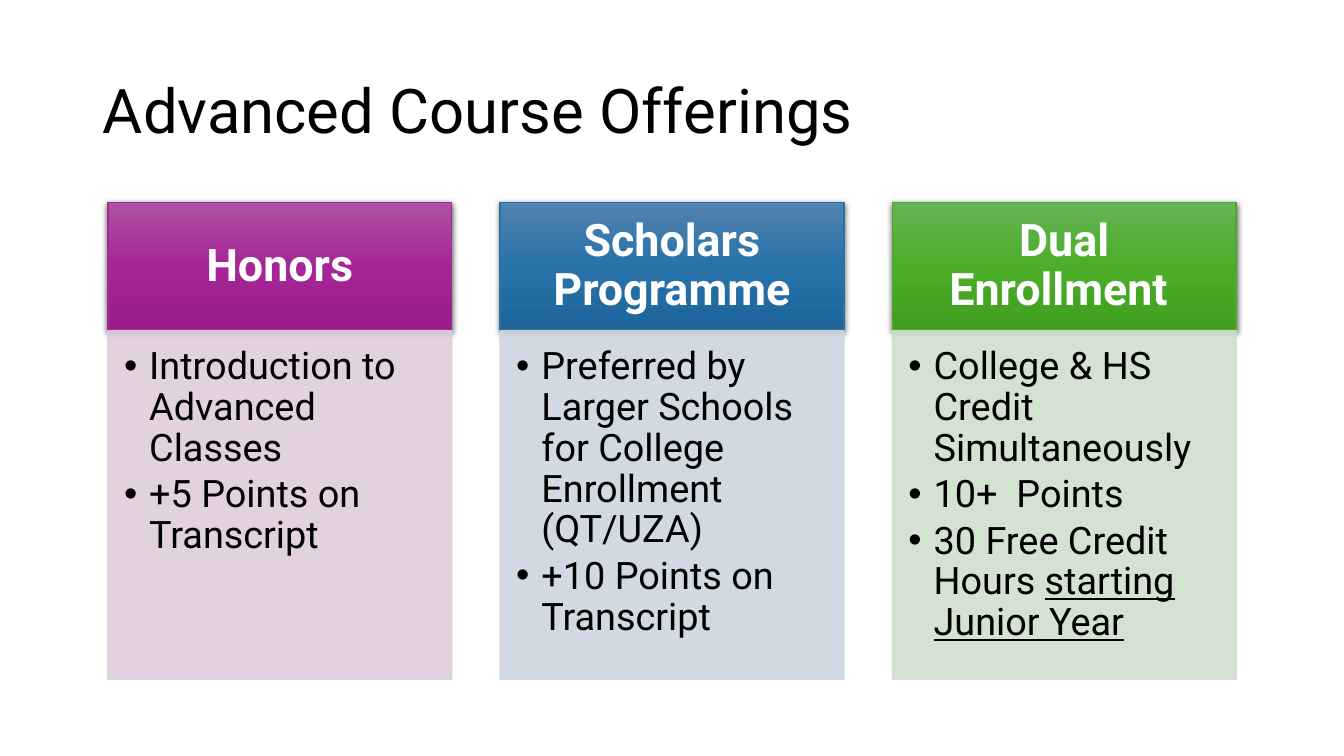
"""Builds the slide that compares three kinds of advanced courses."""
from copy import deepcopy

from lxml import etree
from pptx import Presentation
from pptx.dml.color import RGBColor
from pptx.enum.shapes import MSO_SHAPE
from pptx.enum.text import MSO_ANCHOR, MSO_AUTO_SIZE, PP_ALIGN
from pptx.oxml.ns import qn
from pptx.util import Inches, Pt

RECTANGLE = MSO_SHAPE.RECTANGLE
TOP, MIDDLE = MSO_ANCHOR.TOP, MSO_ANCHOR.MIDDLE
LEFT, CENTER = PP_ALIGN.LEFT, PP_ALIGN.CENTER
NO_AUTOFIT = MSO_AUTO_SIZE.NONE
TITLE_ONLY = 5

FONT = "Roboto"
COLORS = {"text": "000000", "header text": "FFFFFF", "shadow": "000000"}
COLUMN_LEFT, COLUMN_STEP, COLUMN_WIDTH = 1.07, 3.89, 3.41
HEADER_TOP, HEADER_HEIGHT, BODY_HEIGHT = 2.01, 1.27, 3.46

COURSES = [
    {
        "name": "Honors",
        "gradient": ["AC53A0", "A62598", "991C8B"], "line": "A02B93", "body": "DFCDDC",
        "points": [["Introduction to Advanced Classes"], ["+5 Points on Transcript"]],
    },
    {
        "name": "Scholars Programme",
        "gradient": ["5382AF", "2772A9", "1D669C"], "line": "2C71A4", "body": "CDD6E0",
        "points": [["Preferred by Larger Schools for College Enrollment (QT/UZA)"],
                   ["+10 Points on Transcript"]],
    },
    {
        "name": "Dual Enrollment ",
        "gradient": ["66B354", "4BAD28", "409F1E"], "line": "4EA72E", "body": "D0E1CD",
        "points": [["College & HS Credit Simultaneously"], ["10+  Points"],
                   ["30 Free Credit Hours ", "starting Junior Year"]],
    },
]


def rgb(value):
    """Turn a hex string into a colour."""
    return RGBColor.from_string(value)


def format_paragraph(para, size, color, align=LEFT, bold=False):
    """Set the spacing, alignment and font of a paragraph."""
    para.alignment = align
    para.line_spacing = 0.9
    for span in para.runs:
        span.font.name = FONT
        span.font.size = Pt(size)
        span.font.bold = bold
        span.font.color.rgb = rgb(color)


def add_bullet(para):
    """Give a paragraph a hanging round bullet."""
    properties = para._p.get_or_add_pPr()
    properties.set("marL", str(Inches(0.25)))
    properties.set("indent", str(-Inches(0.25)))
    etree.SubElement(properties, qn("a:buFont"), typeface="Arial")
    etree.SubElement(properties, qn("a:buChar"), char="•")


def add_alpha(shape, percent):
    """Make every solid colour of a shape partly transparent."""
    for color in shape._element.spPr.iter(qn("a:srgbClr")):
        etree.SubElement(color, qn("a:alpha"), val=str(percent * 1000))


def add_shadow(shape):
    """Put a soft shadow below a shape."""
    effects = shape._element.spPr.find(qn("a:effectLst"))
    shadow = etree.SubElement(effects, qn("a:outerShdw"), blurRad=str(Pt(4.5)),
                              dist=str(Pt(1.5)), dir="5400000", algn="ctr", rotWithShape="0")
    color = etree.SubElement(shadow, qn("a:srgbClr"), val=COLORS["shadow"])
    etree.SubElement(color, qn("a:alpha"), val="63000")


def fill_gradient(shape, colors):
    """Fill a shape from top to bottom with evenly spaced colours."""
    shape.fill.gradient()
    shape.fill.gradient_angle = 270
    stop_list = shape._element.spPr.find(".//" + qn("a:gsLst"))
    stop_list.append(deepcopy(stop_list[-1]))
    for index, (stop, color) in enumerate(zip(shape.fill.gradient_stops, colors)):
        stop.position = index / (len(colors) - 1)
        stop.color.rgb = rgb(color)


def add_box(page, left, top, height, line, margins, anchor):
    """Add a column-wide outlined rectangle that is ready for text."""
    box = page.shapes.add_shape(RECTANGLE, Inches(left), Inches(top),
                                Inches(COLUMN_WIDTH), Inches(height))
    box.line.color.rgb = rgb(line)
    box.line.width = Pt(1)
    box.shadow.inherit = False
    frame = box.text_frame
    frame.word_wrap = True
    frame.vertical_anchor = anchor
    (frame.margin_left, frame.margin_top,
     frame.margin_right, frame.margin_bottom) = map(Inches, margins)
    return box


def add_header(page, left, course):
    """Add the gradient box with the name of a course."""
    box = add_box(page, left, HEADER_TOP, HEADER_HEIGHT, course["line"],
                  (0.25, 0.14, 0.25, 0.14), MIDDLE)
    fill_gradient(box, course["gradient"])
    add_shadow(box)
    box.text_frame.text = course["name"]
    format_paragraph(box.text_frame.paragraphs[0], 32, COLORS["header text"], CENTER, True)


def add_body(page, left, course):
    """Add the pale box with the bullet points of a course."""
    box = add_box(page, left, HEADER_TOP + HEADER_HEIGHT, BODY_HEIGHT, course["body"],
                  (0.16, 0.16, 0.21, 0.24), TOP)
    box.fill.solid()
    box.fill.fore_color.rgb = rgb(course["body"])
    add_alpha(box, 90)
    frame = box.text_frame
    for index, (plain, *underlined) in enumerate(course["points"]):
        para = frame.add_paragraph() if index else frame.paragraphs[0]
        para.text = plain
        for words in underlined:
            span = para.add_run()
            span.text = words
            span.font.underline = True
        format_paragraph(para, 27, COLORS["text"])
        para.space_after = Pt(4)
        add_bullet(para)


def set_title(page, text):
    """Place and format the slide title."""
    title = page.shapes.title
    title.left, title.top = Inches(0.92), Inches(0.4)
    title.width, title.height = Inches(11.5), Inches(1.45)
    frame = title.text_frame
    frame.text = text
    frame.auto_size = NO_AUTOFIT
    frame.vertical_anchor = MIDDLE
    format_paragraph(frame.paragraphs[0], 44, COLORS["text"])


def main():
    """Build and save the deck."""
    deck = Presentation()
    deck.slide_width, deck.slide_height = Inches(13.33), Inches(7.5)
    page = deck.slides.add_slide(deck.slide_layouts[TITLE_ONLY])
    set_title(page, "Advanced Course Offerings")
    for index, course in enumerate(COURSES):
        left = COLUMN_LEFT + index * COLUMN_STEP
        add_header(page, left, course)
        add_body(page, left, course)
    deck.save("out.pptx")


if __name__ == "__main__":
    main()
